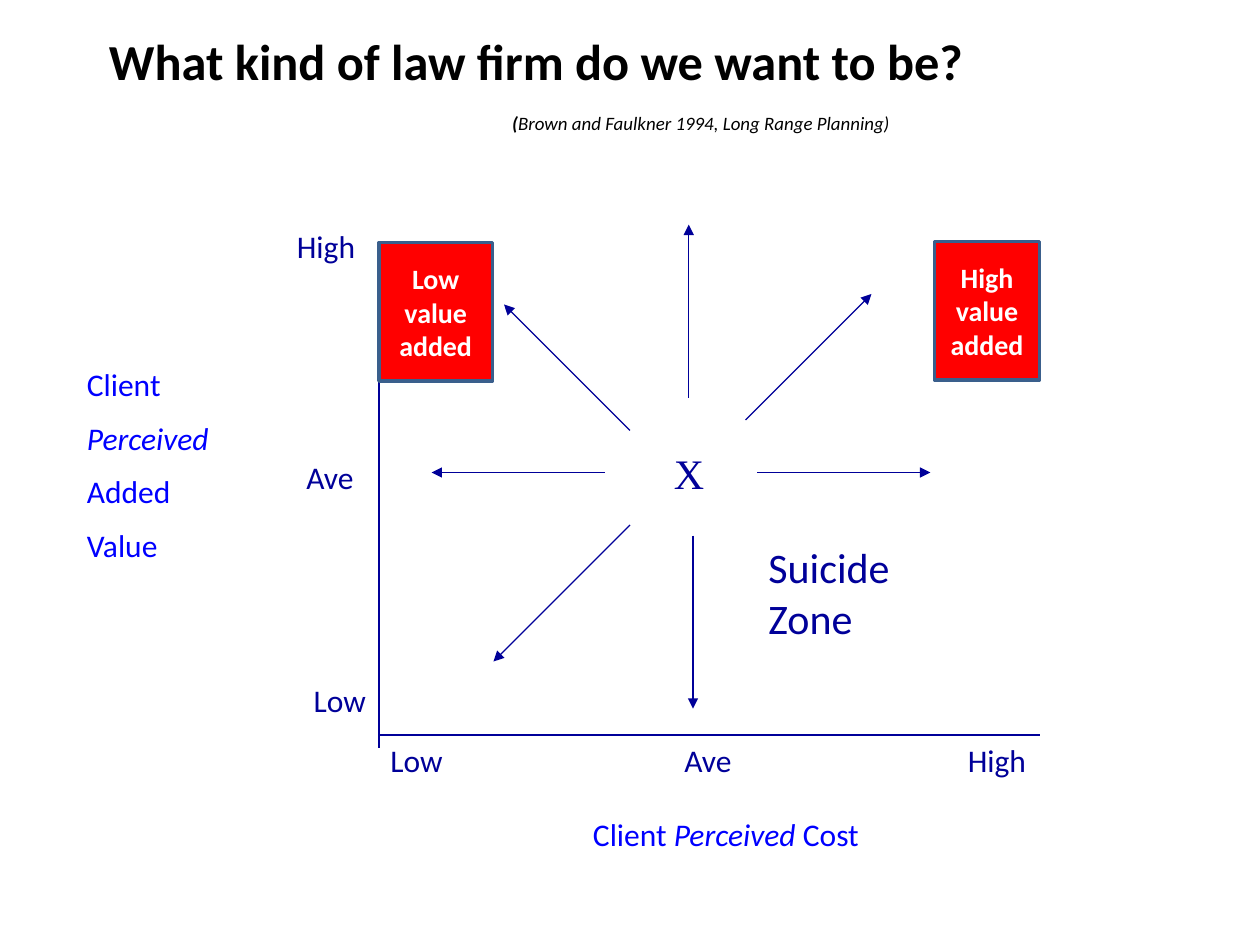
from lxml.etree import SubElement
from pptx import Presentation
from pptx.dml.color import RGBColor
from pptx.enum.shapes import MSO_CONNECTOR, MSO_SHAPE
from pptx.enum.text import MSO_ANCHOR, PP_ALIGN
from pptx.oxml.ns import qn
from pptx.util import Inches, Pt

COLORS = {"black": "000000", "navy": "000099", "blue": "0000FF",
          "red": "FF0000", "border": "3A5F8C", "white": "FFFFFF"}
COLUMNS = 120  # square grid cells across the slide; it is 90 rows high

# Each paragraph is a list of (text, style) runs; style letters: b bold, i italic
# left, top, width, height, size, colour, paragraphs
TEXTS = [
    (9.2, 2.3, 107.4, 7.2, 28.8, "black", [[("What kind of law firm do we want to be?", "b")]]),
    (47.6, 10, 50, 3.6, 10.8, "black",
     [[("(", "bi"), ("Brown and Faulkner 1994, Long Range Planning)", "i")]]),
    (7.1, 34.2, 50.6, 21.2, 18, "blue",
     [[("Client", "")], [("Perceived", "i")], [("Added", "")], [("Value", "")]]),
    (55.3, 77, 35, 4.8, 18, "blue",
     [[("Client ", ""), ("Perceived", "i"), (" Cost", "")]]),
    (72, 51, 17, 10.8, 24, "navy", [[("Suicide Zone", "")]]),
]
CENTRE_MARK = (63, 42, 5, 6, 24, "navy", [[("X", "")]])

# label, left, top
VERTICAL_SCALE = [("High", 27.1, 21), ("Ave", 28, 43), ("Low", 28.7, 64.3)]
HORIZONTAL_SCALE = [("Low", 36, 70), ("Ave", 64, 70), ("High", 91, 70)]

# start column, start row, column change, row change
AXES = [(36.1, 23.2, 0, 48), (36, 70, 63, 0)]
REACH, DIAGONAL = 16.5, 12
ARROWS = [
    (66, 51, 0, REACH), (72.1, 45, REACH, 0),
    (65.6, 37.9, 0, -REACH), (57.6, 45, -REACH, 0),
    (60, 50, -DIAGONAL - 1, DIAGONAL + 1),
    (60, 41, -DIAGONAL, -DIAGONAL), (71, 40, DIAGONAL, -DIAGONAL),
]
# label, left, top, width
VALUE_BOXES = [("High value added", 89, 23, 10), ("Low value added", 36.1, 23.1, 10.8)]
VALUE_BOX_HEIGHT = 13.2

presentation = Presentation()
presentation.slide_width, presentation.slide_height = Inches(10), Inches(7.5)
slide = presentation.slides.add_slide(presentation.slide_layouts[6])


def cells(*counts):
    return [round(count * presentation.slide_width / COLUMNS) for count in counts]


def color(name):
    return RGBColor.from_string(COLORS[name])


def write(shape, paragraphs, size, ink, font="Calibri", align=PP_ALIGN.LEFT):
    frame = shape.text_frame
    frame.word_wrap = True
    for index, runs in enumerate(paragraphs):
        paragraph = frame.add_paragraph() if index else frame.paragraphs[0]
        paragraph.alignment = align
        if index:
            paragraph.space_before = Pt(size / 2)
        for text, style in runs:
            run = paragraph.add_run()
            run.text = text
            run.font.name, run.font.size = font, Pt(size)
            run.font.bold, run.font.italic = "b" in style, "i" in style
            run.font.color.rgb = color(ink)


def add_text(left, top, width, height, size, ink, paragraphs, font="Calibri"):
    box = slide.shapes.add_textbox(*cells(left, top, width, height))
    write(box, paragraphs, size, ink, font)


def add_line(column, row, across, down, arrow=False):
    line = slide.shapes.add_connector(
        MSO_CONNECTOR.STRAIGHT, *cells(column, row, column + across, row + down))
    line.line.color.rgb = color("navy")
    line.line.width = Pt(0.75)
    properties = line._element.spPr
    if arrow:
        SubElement(properties.find(qn("a:ln")), qn("a:tailEnd"), type="triangle")
    SubElement(properties, qn("a:effectLst"))


for axis in AXES:
    add_line(*axis)
for arrow in ARROWS:
    add_line(*arrow, arrow=True)
for text in TEXTS:
    add_text(*text)
add_text(*CENTRE_MARK, font="Times New Roman")
for label, left, top in VERTICAL_SCALE + HORIZONTAL_SCALE:
    add_text(left, top, 12, 5.2, 18, "navy", [[(label, "")]])

for label, left, top, width in VALUE_BOXES:
    box = slide.shapes.add_shape(
        MSO_SHAPE.RECTANGLE, *cells(left, top, width, VALUE_BOX_HEIGHT))
    box.shadow.inherit = False
    box.fill.solid()
    box.fill.fore_color.rgb = color("red")
    box.line.color.rgb = color("border")
    box.line.width = Pt(2)
    box.text_frame.vertical_anchor = MSO_ANCHOR.MIDDLE
    write(box, [[(label, "b")]], 16, "white", align=PP_ALIGN.CENTER)

presentation.save("out.pptx")
